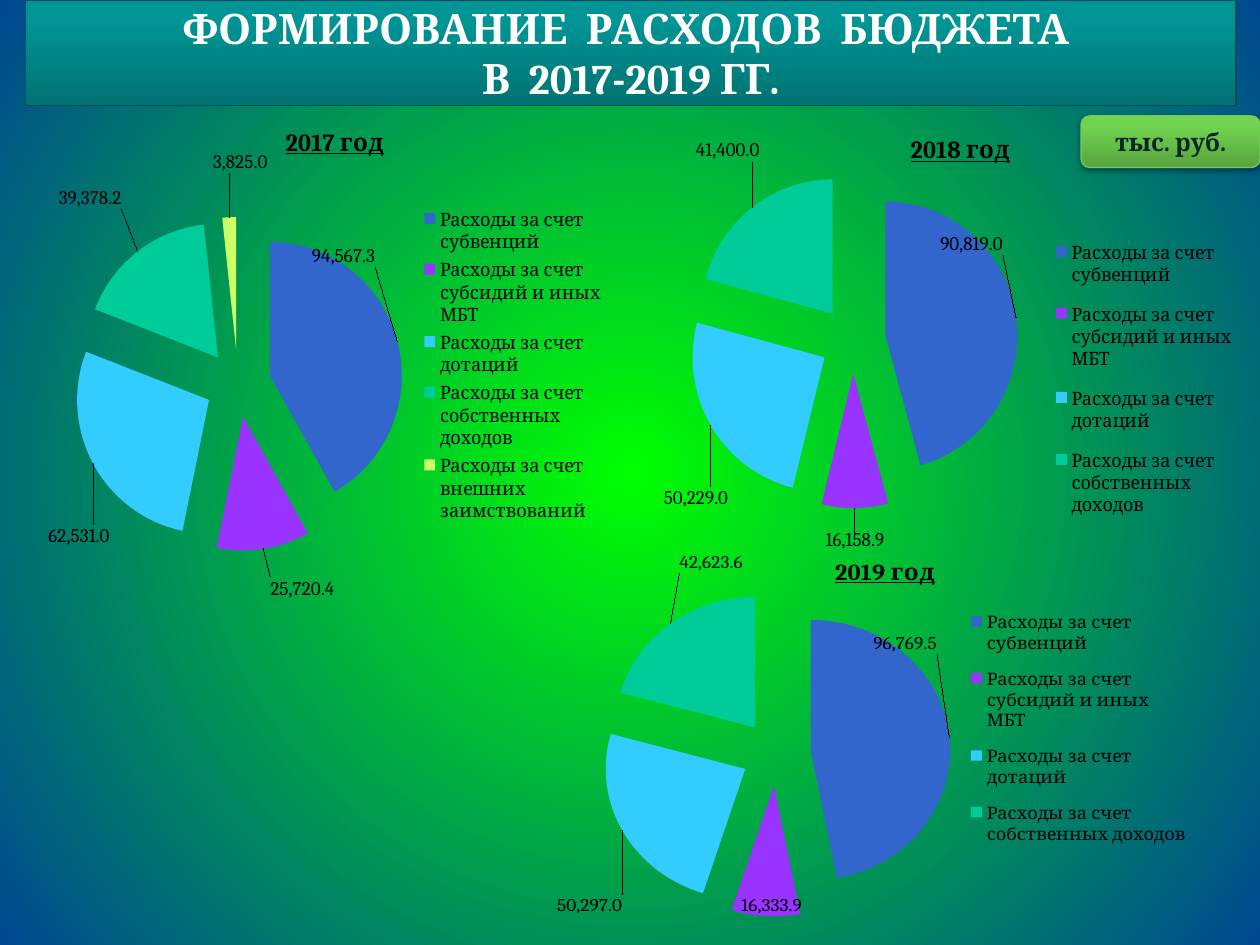
from lxml.etree import SubElement
from pptx import Presentation
from pptx.chart.data import CategoryChartData
from pptx.dml.color import RGBColor
from pptx.enum.chart import XL_CHART_TYPE, XL_LABEL_POSITION, XL_LEGEND_POSITION
from pptx.enum.shapes import MSO_SHAPE
from pptx.enum.text import MSO_ANCHOR, PP_ALIGN
from pptx.oxml import parse_xml
from pptx.oxml.ns import nsdecls, qn
from pptx.util import Inches, Pt

WIDTH, HEIGHT = Inches(10), Inches(7.5)
FONT = "Cambria"
NUMBER_FORMAT = "#,##0.0"
WHITE = RGBColor(0xFF, 0xFF, 0xFF)
BLACK = RGBColor(0x00, 0x00, 0x00)
GREEN = RGBColor(0x00, 0xFF, 0x00)
BLUE = RGBColor(0x00, 0x48, 0x91)
BANNER_LINE = RGBColor(0x03, 0x49, 0x5C)
BADGE_LINE = RGBColor(0x78, 0xC8, 0x5D)
BADGE_TEXT = RGBColor(0x07, 0x24, 0x28)
BANNER_STOPS = [(0, RGBColor(0x00, 0x72, 0x72)), (80, RGBColor(0x00, 0x94, 0x94)),
                (100, RGBColor(0x00, 0x95, 0x95))]
BADGE_STOPS = [(0, RGBColor(0x57, 0xA2, 0x3D)), (80, RGBColor(0x71, 0xD3, 0x50)),
               (100, RGBColor(0x70, 0xD6, 0x4E))]
SLICE_COLORS = [RGBColor(0x33, 0x66, 0xCC), RGBColor(0x99, 0x33, 0xFF),
                RGBColor(0x33, 0xCC, 0xFF), RGBColor(0x00, 0xCC, 0x99),
                RGBColor(0xCC, 0xFF, 0x66)]
UPWARD = '<a:lin ang="16200000" scaled="0"/>'
CIRCLE = ('<a:path path="circle"><a:fillToRect l="50000" t="50000" '
          'r="50000" b="50000"/></a:path>')
CATEGORIES = ["Расходы за счет " + source for source in (
    "субвенций", "субсидий и иных МБТ", "дотаций",
    "собственных доходов", "внешних заимствований")]
YEARS = [
    {"year": "2017 год", "area": (2, 11.2, 46.5, 54.53),
     "values": [94567.3, 25720.4, 62531, 39378.2, 3825],
     "plot": (0.07, 0.12, 0.57, 0.84), "legend": (0.67, 0.19, 0.32, 0.63),
     "shifts": [(-0.16, -0.14), (0.01, 0.04), (0.04, 0.11), (-0.02, -0.07), (0.02, -0.07)]},
    {"year": "2018 год", "area": (50.8, 12.27, 48, 46.13),
     "values": [90819, 16158.9, 50229, 41400],
     "plot": (0.06, 0.13, 0.56, 0.77), "legend": (0.67, 0.25, 0.32, 0.71),
     "shifts": [(-0.14, -0.14), (0, 0.05), (0.04, 0.13), (0.02, -0.09)]},
    {"year": "2019 год", "area": (43.7, 57.33, 51.3, 42.67),
     "values": [96769.5, 16333.9, 50297, 42623.6],
     "plot": (0.03, 0.13, 0.63, 0.87), "legend": (0.65, 0.15, 0.34, 0.7),
     "shifts": [(-0.13, -0.22), (0.01, -0.05), (0.01, 0.16), (0.12, -0.12)]},
]


def place(left, top, width, height):
    """Turn percentages of the slide into lengths."""
    return (int(WIDTH * left / 100), int(HEIGHT * top / 100),
            int(WIDTH * width / 100), int(HEIGHT * height / 100))


def set_gradient(fill, holder, stops, direction):
    """Fill the holder with a gradient of percent and colour stops."""
    fill.solid()
    plain = next(holder.iter(qn("a:solidFill")))
    marks = "".join(f'<a:gs pos="{share * 1000}"><a:srgbClr val="{color}"/></a:gs>'
                    for share, color in stops)
    plain.getparent().replace(plain, parse_xml(
        f'<a:gradFill {nsdecls("a")} rotWithShape="1">'
        f'<a:gsLst>{marks}</a:gsLst>{direction}</a:gradFill>'))


def style_font(font, size, color, bold=False):
    """Set typeface, size, colour and weight."""
    font.name, font.size, font.bold = FONT, Pt(size), bold
    font.color.rgb = color


def add_panel(page, kind, area, stops, line, lines, size, color):
    """Add a gradient shape with centred bold lines of text."""
    panel = page.shapes.add_shape(kind, *place(*area))
    panel.shadow.inherit = False
    set_gradient(panel.fill, panel._element.spPr, stops, UPWARD)
    panel.line.color.rgb = line
    panel.line.width = Pt(0.75)
    frame = panel.text_frame
    frame.word_wrap = True
    frame.vertical_anchor = MSO_ANCHOR.MIDDLE
    frame.margin_left = frame.margin_right = Inches(0.05)
    frame.margin_top = frame.margin_bottom = 0
    para = frame.paragraphs[0]
    para.alignment = PP_ALIGN.CENTER
    for index, text in enumerate(lines):
        if index:
            para.add_line_break()
        span = para.add_run()
        span.text = text
        style_font(span.font, size, color, True)
    return panel


def add_shadow(panel):
    """Add a soft shadow below a panel."""
    effects = panel._element.spPr.find(qn("a:effectLst"))
    shadow = SubElement(effects, qn("a:outerShdw"), blurRad=str(Pt(3.1)),
                        dist=str(Pt(1.8)), dir="5400000", rotWithShape="0")
    color = SubElement(shadow, qn("a:srgbClr"), val="000000")
    SubElement(color, qn("a:alpha"), val="35000")


def set_layout(element, box, before=None, edge=True, inner=False):
    """Give a chart part a manual layout, placed after the named child."""
    for old in element.findall(qn("c:layout")):
        element.remove(old)
    parts = '<c:layoutTarget val="inner"/>' if inner else ""
    if edge:
        parts += '<c:xMode val="edge"/><c:yMode val="edge"/>'
    parts += "".join(f'<c:{name} val="{value}"/>' for name, value in zip("xywh", box))
    layout = parse_xml(f'<c:layout {nsdecls("c")}><c:manualLayout>{parts}'
                       '</c:manualLayout></c:layout>')
    if before:
        element.find(qn(before)).addnext(layout)
    else:
        element.insert(0, layout)


def style_slices(series, shifts):
    """Explode and colour the slices and move their one-line labels."""
    series._element.find(qn("c:tx")).addnext(
        parse_xml(f'<c:explosion {nsdecls("c")} val="25"/>'))
    labels = series.data_labels
    labels.show_value = True
    labels.number_format = NUMBER_FORMAT
    labels.number_format_is_linked = False
    style_font(labels.font, 11, BLACK)
    for index, (color, shift) in enumerate(zip(SLICE_COLORS, shifts)):
        point = series.points[index]
        point.format.fill.solid()
        point.format.fill.fore_color.rgb = color
        label = point.data_label
        style_font(label.font, 11, BLACK)
        label.position = XL_LABEL_POSITION.OUTSIDE_END
        element = labels._element.findall(qn("c:dLbl"))[index]
        set_layout(element, shift, "c:idx", edge=False)
    for body in labels._element.iter(qn("a:bodyPr")):
        body.set("wrap", "none")


def add_pie(page, year, area, values, plot, legend, shifts):
    """Add the exploded pie of one year."""
    data = CategoryChartData(number_format=NUMBER_FORMAT)
    data.categories = CATEGORIES[:len(values)]
    data.add_series(year, values)
    chart = page.shapes.add_chart(XL_CHART_TYPE.PIE, *place(*area), data).chart
    chart.font.name, chart.font.size = "Roboto", Pt(18)
    chart.font.color.rgb = WHITE
    chart.has_title = True
    span = chart.chart_title.text_frame.paragraphs[0].add_run()
    span.text = year
    style_font(span.font, 14, BLACK, True)
    span.font.underline = True
    set_layout(chart.chart_title._element, (0.43, 0.03), "c:tx")
    chart.has_legend = True
    chart.legend.position = XL_LEGEND_POSITION.RIGHT
    chart.legend.include_in_layout = False
    style_font(chart.legend.font, 10.5, BLACK)
    set_layout(chart.legend._element, legend, "c:legendPos")
    set_layout(chart._chartSpace.chart.plotArea, plot, inner=True)
    pie = chart.plots[0]
    pie.vary_by_categories = True
    style_slices(pie.series[0], shifts)


def main():
    """Build the budget expenditure slide."""
    deck = Presentation()
    deck.slide_width, deck.slide_height = WIDTH, HEIGHT
    page = deck.slides.add_slide(deck.slide_layouts[6])
    set_gradient(page.background.fill, page._element.cSld,
                 [(0, GREEN), (100, BLUE)], CIRCLE)
    for entry in YEARS:
        add_pie(page, **entry)
    banner = add_panel(page, MSO_SHAPE.ROUND_2_DIAG_RECTANGLE, (2, 0, 96.1, 11.2),
                       BANNER_STOPS, BANNER_LINE,
                       ["ФОРМИРОВАНИЕ  РАСХОДОВ  БЮДЖЕТА ", "В  2017-2019 ГГ."], 24, WHITE)
    banner.adjustments[0] = 0
    badge = add_panel(page, MSO_SHAPE.ROUNDED_RECTANGLE, (85.8, 12.27, 14.2, 5.47),
                      BADGE_STOPS, BADGE_LINE, ["тыс. руб."], 14, BADGE_TEXT)
    add_shadow(badge)
    deck.save("out.pptx")


if __name__ == "__main__":
    main()
